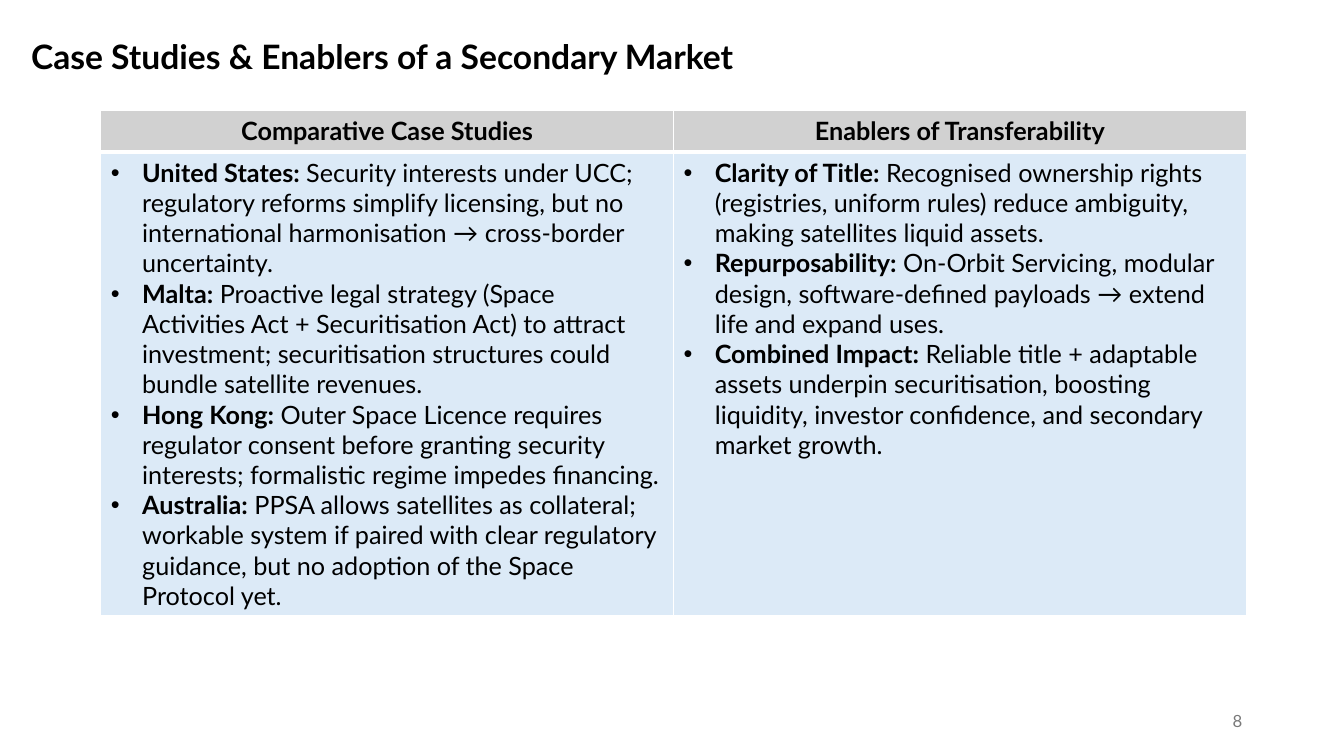
from dataclasses import dataclass

from lxml import etree
from pptx import Presentation
from pptx.dml.color import RGBColor
from pptx.enum.text import MSO_ANCHOR, PP_ALIGN
from pptx.oxml.ns import qn
from pptx.util import Inches, Pt


@dataclass(frozen=True)
class Theme:
    font: str = "Lato"
    ink: str = "000000"
    muted: str = "797979"
    header_fill: str = "D1D1D1"
    body_fill: str = "DCEAF7"
    border: str = "FFFFFF"
    title_size: int = 24
    body_size: int = 18
    number_size: int = 12


TITLE = "Case Studies & Enablers of a Secondary Market"
COLUMNS = {
    "Comparative Case Studies": [
        ("United States:", "Security interests under UCC; regulatory reforms simplify licensing, "
         "but no international harmonisation → cross-border uncertainty."),
        ("Malta:", "Proactive legal strategy (Space Activities Act + Securitisation Act) to attract "
         "investment; securitisation structures could bundle satellite revenues."),
        ("Hong Kong:", "Outer Space Licence requires regulator consent before granting security "
         "interests; formalistic regime impedes financing."),
        ("Australia:", "PPSA allows satellites as collateral; workable system if paired with clear "
         "regulatory guidance, but no adoption of the Space Protocol yet."),
    ],
    "Enablers of Transferability": [
        ("Clarity of Title:", "Recognised ownership rights (registries, uniform rules) reduce "
         "ambiguity, making satellites liquid assets."),
        ("Repurposability:", "On-Orbit Servicing, modular design, software-defined payloads → "
         "extend life and expand uses."),
        ("Combined Impact:", "Reliable title + adaptable assets underpin securitisation, boosting "
         "liquidity, investor confidence, and secondary market growth."),
    ],
}


class SlideBuilder:
    def __init__(self, slide, theme):
        self.slide = slide
        self.theme = theme

    def style(self, p, size, color=None, bold=None, align=PP_ALIGN.LEFT):
        p.alignment = align
        p.font.name = self.theme.font
        p.font.size = Pt(size)
        p.font.bold = bold
        p.font.color.rgb = RGBColor.from_string(color or self.theme.ink)

    def text(self, box, text, size, anchor=MSO_ANCHOR.TOP, **style):
        tf = self.slide.shapes.add_textbox(*map(Inches, box)).text_frame
        tf.word_wrap = True
        tf.vertical_anchor = anchor
        p = tf.paragraphs[0]
        p.text = text
        self.style(p, size, **style)

    def cell(self, cell, fill, top, bottom):
        """Set the borders, then the fill, in the order the schema asks for."""
        tcPr = cell._tc.get_or_add_tcPr()
        for side, width in zip("LRTB", (1, 1, top, bottom)):
            ln = etree.SubElement(tcPr, qn(f"a:ln{side}"), w=str(Pt(width)))
            line_fill = etree.SubElement(ln, qn("a:solidFill"))
            etree.SubElement(line_fill, qn("a:srgbClr"), val=self.theme.border)
        cell.fill.solid()
        cell.fill.fore_color.rgb = RGBColor.from_string(fill)

    def bullet(self, p, label, detail):
        self.style(p, self.theme.body_size)
        indent = Inches(0.31)
        pPr = p._p.get_or_add_pPr()
        pPr.set("marL", str(indent))
        pPr.set("indent", str(-indent))
        marks = (etree.Element(qn("a:buFont"), typeface="Arial"),
                 etree.Element(qn("a:buChar"), char="•"))
        for i, mark in enumerate(marks):
            pPr.insert(i, mark)
        r = p.add_run()
        r.text = label
        r.font.bold = True
        p.add_run().text = f" {detail}"

    def table(self, box, header_height, columns):
        th = self.theme
        table = self.slide.shapes.add_table(2, len(columns), *map(Inches, box)).table
        table.rows[0].height = Inches(header_height)
        table.rows[1].height = Inches(box[3] - header_height)
        for col, (heading, points) in enumerate(columns.items()):
            header, body = table.cell(0, col), table.cell(1, col)
            self.cell(header, th.header_fill, top=1, bottom=3)
            self.cell(body, th.body_fill, top=3, bottom=1)
            p = header.text_frame.paragraphs[0]
            p.text = heading
            self.style(p, th.body_size, bold=True, align=PP_ALIGN.CENTER)
            tf = body.text_frame
            for i, point in enumerate(points):
                self.bullet(tf.add_paragraph() if i else tf.paragraphs[0], *point)


def main():
    prs = Presentation()
    prs.slide_width, prs.slide_height = Inches(13.33), Inches(7.5)
    theme = Theme()
    s = SlideBuilder(prs.slides.add_slide(prs.slide_layouts[6]), theme)

    # Title
    s.text((0.21, 0.31, 12.94, 0.5), TITLE, theme.title_size, bold=True)

    # Page number
    s.text((9.42, 6.95, 3, 0.4), "8", theme.number_size, anchor=MSO_ANCHOR.MIDDLE,
           color=theme.muted, align=PP_ALIGN.RIGHT)

    # Case studies beside enablers
    s.table((1, 1.1, 11.36, 5.01), 0.41, COLUMNS)

    prs.save("out.pptx")


if __name__ == "__main__":
    main()
